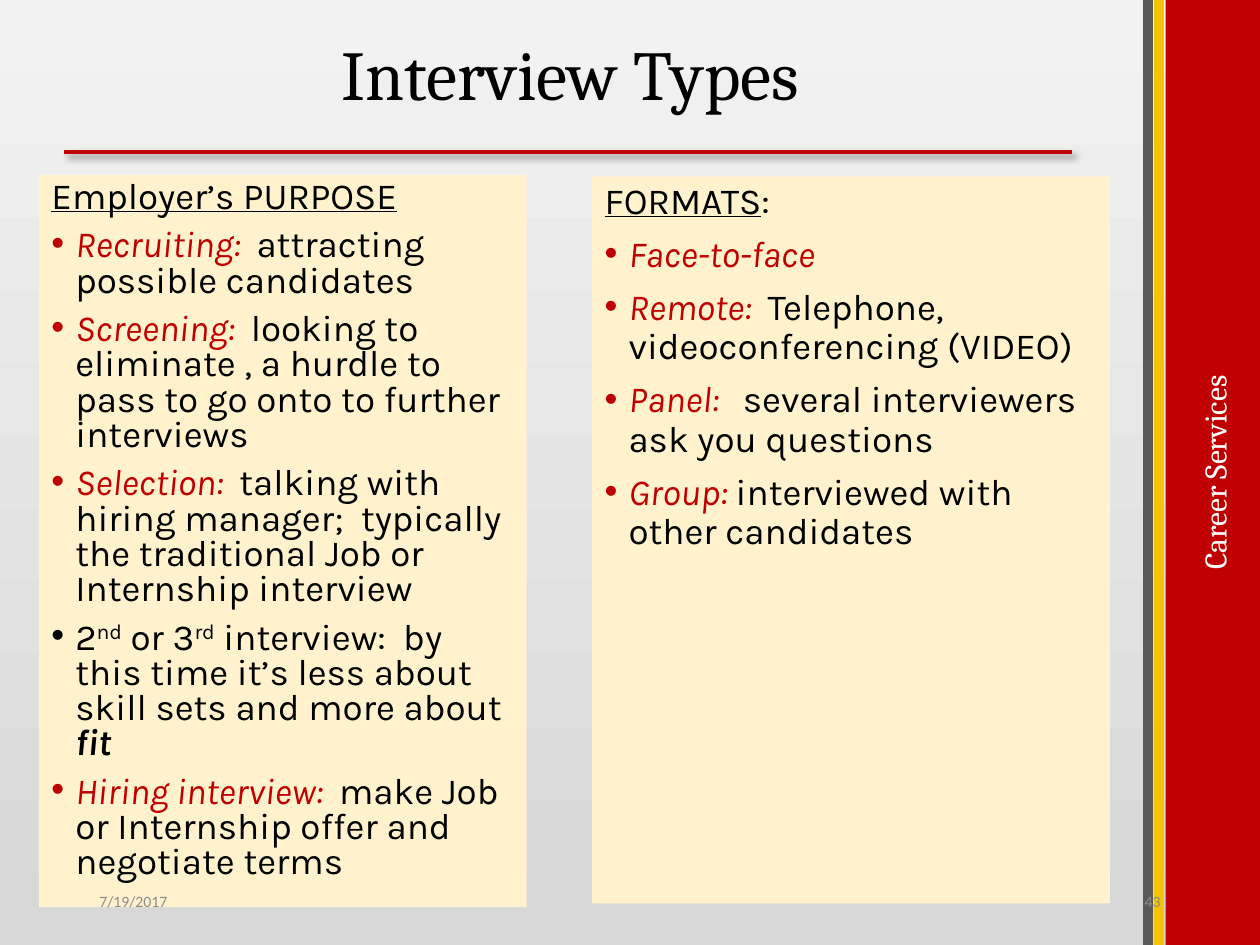
from lxml.etree import SubElement
from pptx import Presentation
from pptx.dml.color import RGBColor
from pptx.enum.shapes import MSO_CONNECTOR, MSO_SHAPE
from pptx.enum.text import MSO_ANCHOR, PP_ALIGN
from pptx.oxml.ns import qn
from pptx.util import Inches, Pt

COLORS = {
    "red": "C00000", "yellow": "F5C400", "slate": "58595B", "cream": "FFF2CC",
    "black": "000000", "white": "FFFFFF", "gray": "8C8C8C",
    "light": "F2F2F2", "dark": "D8D8D8",
}
RGB = {name: RGBColor.from_string(value) for name, value in COLORS.items()}
STYLES = {
    "plain": {},
    "heading": {"underline": True},
    "term": {"italic": True},
    "strong": {"bold": True, "italic": True},
    "raised": {},
}

deck = Presentation()
deck.slide_width, deck.slide_height = Inches(10), Inches(7.5)
page = deck.slides.add_slide(deck.slide_layouts[5])
page.background.fill.solid()
page.background.fill.fore_color.rgb = RGB["light"]


def area(left, top, width, height):
    across, down = deck.slide_width / 100, deck.slide_height / 100
    return [round(share * unit) for share, unit in
            zip((left, top, width, height), (across, down, across, down))]


def write(frame, lines, name, size, color, **layout):
    frame.word_wrap = True
    for number, line in enumerate(lines):
        para = frame.add_paragraph() if number else frame.paragraphs[0]
        for key, value in layout.items():
            setattr(para, key, value)
        for text, style in line:
            span = para.add_run()
            span.text = text
            values = {"name": name, "size": Pt(size), **STYLES[style]}
            for key, value in values.items():
                setattr(span.font, key, value)
            span.font.color.rgb = RGB["red" if style == "term" else color]
            if style == "raised":
                span.font._element.set("baseline", "30000")


backdrop = page.shapes.add_shape(MSO_SHAPE.RECTANGLE, *area(0, 0, 94.3, 100))
backdrop.shadow.inherit = False
backdrop.line.fill.background()
backdrop.fill.gradient()
backdrop.fill.gradient_angle = 90
for stop, color in zip(backdrop.fill.gradient_stops, ("dark", "light")):
    stop.color.rgb = RGB[color]

sidebar = page.shapes.add_shape(MSO_SHAPE.RECTANGLE, *area(92.5, 0, 7.5, 100))
sidebar.shadow.inherit = False
sidebar.line.fill.background()
sidebar.fill.solid()
sidebar.fill.fore_color.rgb = RGB["red"]

for left, top, width, height, color, weight in [
    (5.1, 16.13, 80, 0, "red", 2.25),
    (92, 0, 0, 100, "yellow", 6),
    (91.1, 0, 0, 100, "slate", 6),
]:
    x, y, dx, dy = area(left, top, width, height)
    rule = page.shapes.add_connector(MSO_CONNECTOR.STRAIGHT, x, y, x + dx, y + dy)
    rule.line.color.rgb = RGB[color]
    rule.line.width = Pt(weight)
    effects = SubElement(rule._element.spPr, qn("a:effectLst"))
    if color == "red":
        shadow = SubElement(effects, qn("a:outerShdw"), blurRad=str(Pt(4)),
                            dist=str(Pt(3)), dir="2700000", algn="tl")
        tint = SubElement(shadow, qn("a:srgbClr"), val=COLORS["black"])
        SubElement(tint, qn("a:alpha"), val="40000")

title = page.shapes.title
title.left, title.top, title.width, title.height = area(5.1, 3.87, 80.3, 8.8)
title.text_frame.vertical_anchor = MSO_ANCHOR.MIDDLE
write(title.text_frame, [[("Interview Types", "plain")]], "Cambria", 40, "black",
      alignment=PP_ALIGN.CENTER, line_spacing=0.9)
page.shapes._spTree.append(title._element)

purposes = [
    [("Employer’s PURPOSE", "heading")],
    [("Recruiting:  ", "term"), ("attracting possible candidates", "plain")],
    [("Screening:  ", "term"),
     ("looking to eliminate , a hurdle to pass to go onto to further interviews", "plain")],
    [("Selection:  ", "term"),
     ("talking with hiring manager;  typically the traditional Job or Internship interview",
      "plain")],
    [("2", "plain"), ("nd", "raised"), (" or 3", "plain"), ("rd", "raised"),
     (" interview:  by this time it’s less about skill sets and more about ", "plain"),
     ("fit", "strong")],
    [("Hiring interview:  ", "term"),
     ("make Job or Internship offer and negotiate terms", "plain")],
]
formats = [
    [("FORMATS", "heading"), (":", "plain")],
    [("Face-to-face", "term")],
    [("Remote:  ", "term"), ("Telephone, videoconferencing (VIDEO)", "plain")],
    [("Panel:   ", "term"), ("several interviewers ask you questions", "plain")],
    [("Group: ", "term"), ("interviewed with other candidates", "plain")],
]
for place, lines, spacing in [
    ((3.1, 18.53, 38.7, 77.47), purposes, 0.8),
    ((47, 18.67, 41.1, 76.93), formats, 0.9),
]:
    panel = page.shapes.add_shape(MSO_SHAPE.RECTANGLE, *area(*place))
    panel.shadow.inherit = False
    panel.line.fill.background()
    panel.fill.solid()
    panel.fill.fore_color.rgb = RGB["cream"]
    panel.text_frame.vertical_anchor = MSO_ANCHOR.TOP
    write(panel.text_frame, lines, "Karla", 21, "black", alignment=PP_ALIGN.LEFT,
          line_spacing=spacing, space_before=Pt(7.5))
    for number, para in enumerate(panel.text_frame.paragraphs):
        properties = para._p.get_or_add_pPr()
        properties.set("marL", str(Inches(0.19)))
        properties.set("indent", str(Inches(-0.19)))
        if number:
            SubElement(properties, qn("a:buFont"), typeface="Arial")
            SubElement(properties, qn("a:buChar"), char="•")

for text, place, name, size, color, align, anchor, turn in [
    ("Career Services", (76.6, 47.33, 39.5, 5.33), "Cambria", 18, "white",
     PP_ALIGN.CENTER, MSO_ANCHOR.TOP, 270),
    ("7/19/2017", (6.9, 92.67, 22.5, 5.33), "Calibri", 9, "gray",
     PP_ALIGN.LEFT, MSO_ANCHOR.MIDDLE, 0),
    ("43", (70.6, 92.67, 22.5, 5.33), "Calibri", 9, "gray",
     PP_ALIGN.RIGHT, MSO_ANCHOR.MIDDLE, 0),
]:
    box = page.shapes.add_textbox(*area(*place))
    box.rotation = turn
    box.text_frame.vertical_anchor = anchor
    write(box.text_frame, [[(text, "plain")]], name, size, color, alignment=align)

deck.save("out.pptx")
